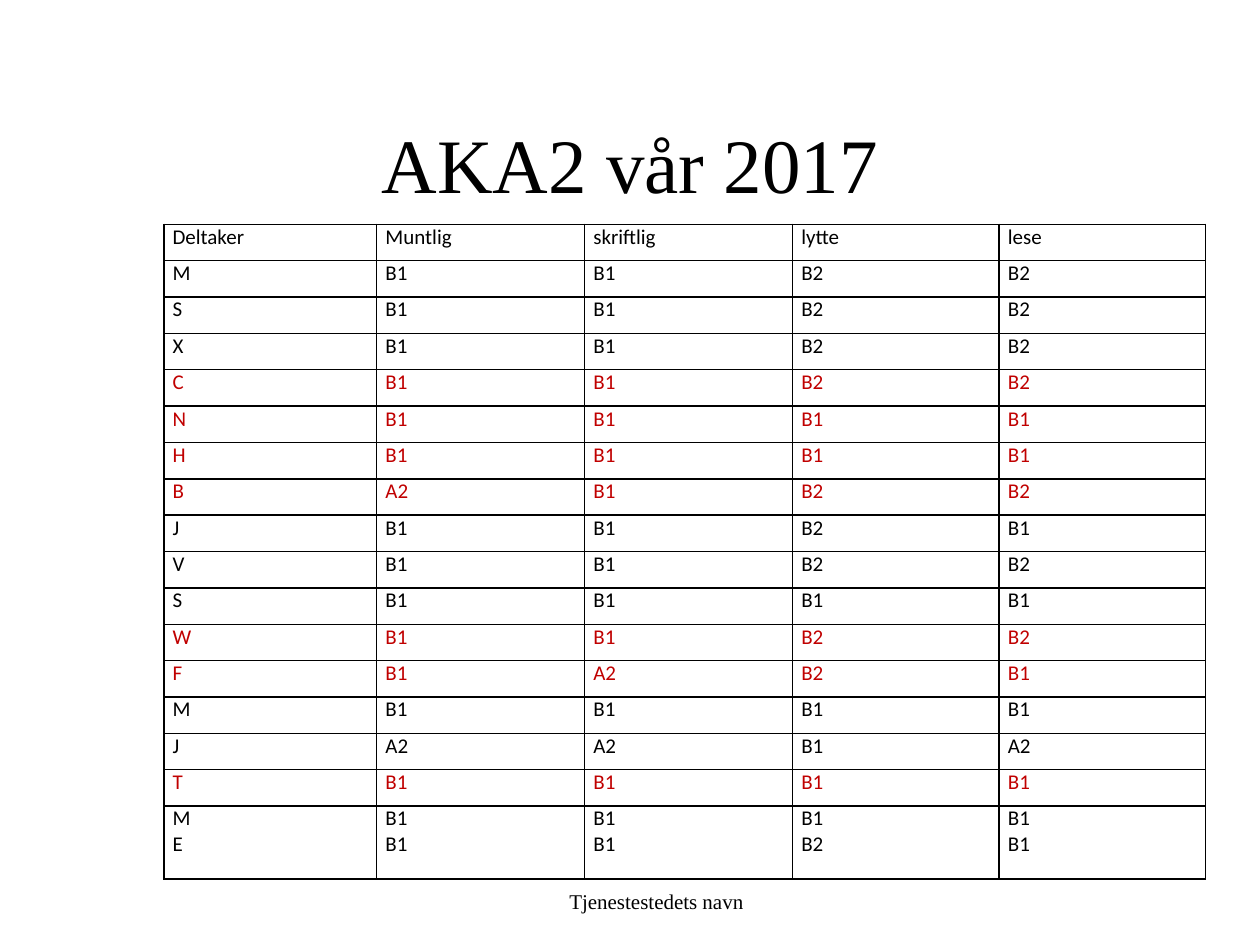
from pptx import Presentation
from pptx.dml.color import RGBColor
from pptx.enum.text import MSO_ANCHOR, MSO_AUTO_SIZE, PP_ALIGN
from pptx.oxml import parse_xml
from pptx.oxml.ns import nsdecls
from pptx.util import Inches, Pt

BLACK = RGBColor(0x00, 0x00, 0x00)
RED = RGBColor(0xC0, 0x00, 0x00)
SERIF, SANS = "Times New Roman", "Calibri"

HEADS = "Deltaker Muntlig skriftlig lytte lese".split()
# One line per participant: speaking, writing, listening, reading
LEVELS = """
M B1 B1 B2 B2
S B1 B1 B2 B2
X B1 B1 B2 B2
C B1 B1 B2 B2
N B1 B1 B1 B1
H B1 B1 B1 B1
B A2 B1 B2 B2
J B1 B1 B2 B1
V B1 B1 B2 B2
S B1 B1 B1 B1
W B1 B1 B2 B2
F B1 A2 B2 B1
M B1 B1 B1 B1
J A2 A2 B1 A2
T B1 B1 B1 B1
M B1 B1 B1 B1
E B1 B1 B2 B1
"""
MARKED = set("CNHBWFT")
WIDTHS = [1.69, 1.65, 1.65, 1.64, 1.64]
ROW = 5.2 / 18


def set_text(frame, text, size, face, color=BLACK, align=PP_ALIGN.LEFT):
    frame.text = text
    font_style = {"size": Pt(size), "name": face}
    for para in frame.paragraphs:
        para.alignment = align
        for run in para.runs:
            for key, value in font_style.items():
                setattr(run.font, key, value)
            run.font.color.rgb = color


def set_cell(cell, text, color):
    margins = {"margin_left": 0.07, "margin_right": 0.07,
               "margin_top": 0, "margin_bottom": 0}
    for key, value in margins.items():
        setattr(cell, key, Inches(value))
    set_text(cell.text_frame, text, 12, SANS, color)
    # Borders come before the fill in the cell properties
    props = cell._tc.get_or_add_tcPr()
    for side in "LRTB":
        props.append(parse_xml(
            f'<a:ln{side} {nsdecls("a")} w="{Pt(1)}"><a:solidFill>'
            f'<a:srgbClr val="{BLACK}"/></a:solidFill></a:ln{side}>'))
    cell.fill.background()


def add_title(slide, text):
    title = slide.shapes.title
    place = {"left": 0.75, "top": 0.67, "width": 8.5, "height": 1.25}
    for key, value in place.items():
        setattr(title, key, Inches(value))
    frame = title.text_frame
    frame.auto_size = MSO_AUTO_SIZE.NONE
    frame.vertical_anchor = MSO_ANCHOR.MIDDLE
    set_text(frame, text, 44, SERIF, align=PP_ALIGN.CENTER)


def add_levels(slide):
    rows = [line.split() for line in LEVELS.split("\n") if line]
    # The last two participants share one row
    last = ["\n".join(pair) for pair in zip(*rows[-2:])]
    rows = [HEADS] + rows[:-2] + [last]
    table = slide.shapes.add_table(
        len(rows), len(HEADS), Inches(1.3), Inches(1.78),
        Inches(sum(WIDTHS)), Inches(5.2)).table
    table.first_row = table.horz_banding = False
    for col, width in zip(table.columns, WIDTHS):
        col.width = Inches(width)
    for row, texts in zip(table.rows, rows):
        row.height = Inches(ROW)
        color = RED if texts[0] in MARKED else BLACK
        for cell, text in zip(row.cells, texts):
            set_cell(cell, text, color)
    table.rows[len(rows) - 1].height = Inches(2 * ROW)


def add_footer(slide, text):
    box = slide.shapes.add_textbox(
        Inches(4.42), Inches(7), Inches(1.59), Inches(0.3))
    frame = box.text_frame
    frame.word_wrap = False
    frame.auto_size = MSO_AUTO_SIZE.SHAPE_TO_FIT_TEXT
    set_text(frame, text, 12, SERIF)


def main():
    deck = Presentation()
    deck.slide_width, deck.slide_height = Inches(10), Inches(7.5)
    slide = deck.slides.add_slide(deck.slide_layouts[5])
    add_footer(slide, "Tjenestestedets navn")
    add_title(slide, "AKA2 vår 2017")
    add_levels(slide)
    deck.save("out.pptx")


if __name__ == "__main__":
    main()
